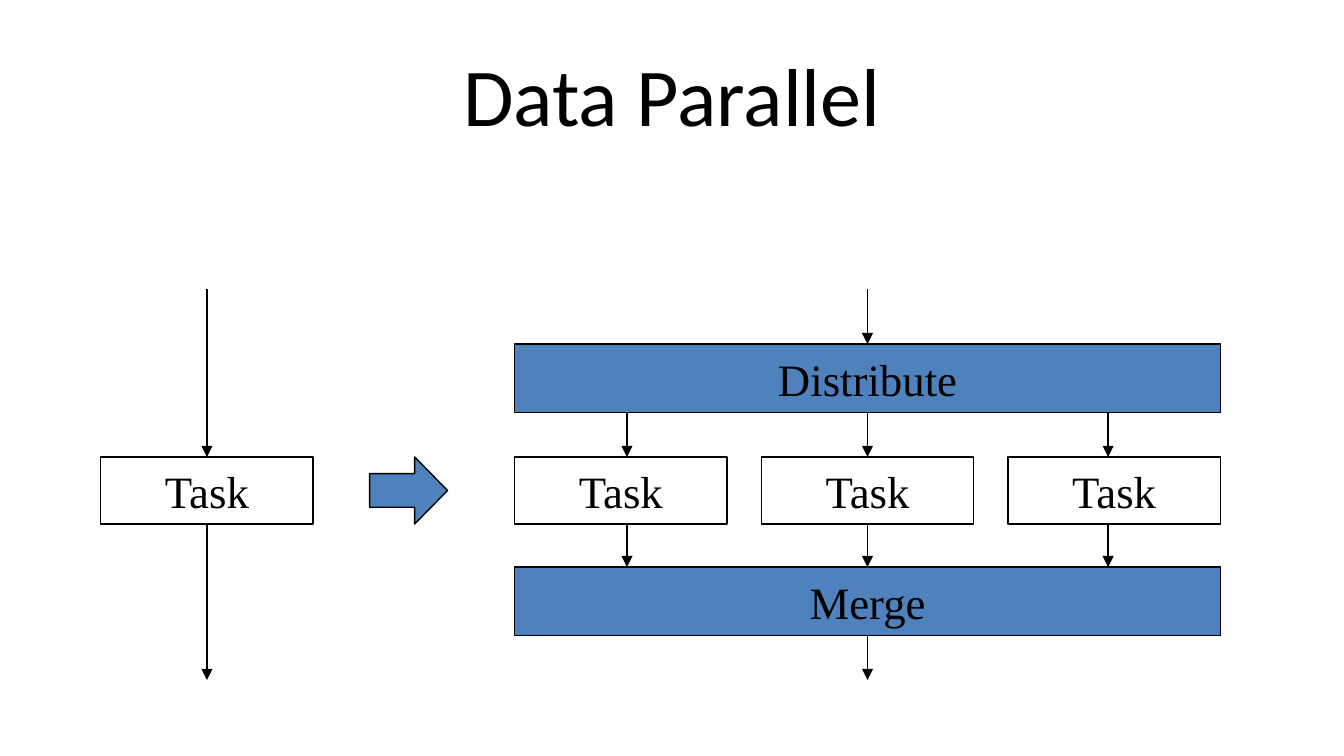
from lxml import etree
from pptx import Presentation
from pptx.dml.color import RGBColor
from pptx.enum.shapes import MSO_CONNECTOR, MSO_SHAPE
from pptx.enum.text import MSO_ANCHOR, PP_ALIGN
from pptx.oxml.ns import qn
from pptx.util import Inches, Pt

RECTANGLE = MSO_SHAPE.RECTANGLE
RIGHT_ARROW = MSO_SHAPE.RIGHT_ARROW
STRAIGHT = MSO_CONNECTOR.STRAIGHT
MIDDLE = MSO_ANCHOR.MIDDLE
CENTER = PP_ALIGN.CENTER

BLACK = RGBColor(0x00, 0x00, 0x00)
BLUE = RGBColor(0x4F, 0x81, 0xBD)
TITLE_FONT = {"name": "Calibri", "size": Pt(44)}
LABEL_FONT = {"name": "Times New Roman", "size": Pt(24)}

SLIDE_WIDTH = 10
SLIDE_HEIGHT = SLIDE_WIDTH * 9 / 16
TASK_WIDTH, TASK_HEIGHT = 1.58, 0.5
BAR_HEIGHT = 0.51
TASK_OFFSET = 1.25
DISTRIBUTE_OFFSET, MERGE_OFFSET = 0.41, 2.07
BRANCH_SPACING = 1.79
TASK_COUNT = 3


def write_text(frame, text, font_format):
    """Write one centred line in the given font."""
    frame.vertical_anchor = MIDDLE
    frame.word_wrap = True
    paragraph = frame.paragraphs[0]
    paragraph.alignment = CENTER
    run = paragraph.add_run()
    run.text = text
    for attribute, value in font_format.items():
        setattr(run.font, attribute, value)
    run.font.color.rgb = BLACK


def add_title(slide, box, text):
    """Place the title placeholder in its box."""
    title = slide.shapes.title
    for attribute, value in zip(("left", "top", "width", "height"), box):
        setattr(title, attribute, Inches(value))
    write_text(title.text_frame, text, TITLE_FONT)


def add_block(slide, kind, box, fill=None, label=None):
    """Add an outlined shape with an optional fill and label."""
    block = slide.shapes.add_shape(kind, *map(Inches, box))
    block.shadow.inherit = False
    if fill is None:
        block.fill.background()
    else:
        block.fill.solid()
        block.fill.fore_color.rgb = fill
    block.line.color.rgb = BLACK
    block.line.width = Pt(0.75)
    if label:
        write_text(block.text_frame, label, LABEL_FONT)
    return block


def add_flow(slide, x, start, end):
    """Add a downward arrow at x."""
    flow = slide.shapes.add_connector(STRAIGHT, *map(Inches, (x, start, x, end)))
    flow.line.color.rgb = BLACK
    flow.line.width = Pt(0.75)
    etree.SubElement(flow.line._get_or_add_ln(), qn("a:tailEnd"), type="triangle")
    etree.SubElement(flow._element.spPr, qn("a:effectLst"))


def add_serial(slide, box):
    """Draw the single task with its input and output."""
    left, top, width, height = box
    task_top = top + TASK_OFFSET
    center = left + width / 2
    add_block(slide, RECTANGLE, (left, task_top, width, TASK_HEIGHT), label="Task")
    add_flow(slide, center, top, task_top)
    add_flow(slide, center, task_top + TASK_HEIGHT, top + height)


def add_parallel(slide, box):
    """Draw the tasks running between the distribute and merge bars."""
    left, top, width, height = box
    center = left + width / 2
    task_top = top + TASK_OFFSET
    distribute_top, merge_top = top + DISTRIBUTE_OFFSET, top + MERGE_OFFSET
    pitch = (width - TASK_WIDTH) / (TASK_COUNT - 1)

    for label, bar_top in (("Distribute", distribute_top), ("Merge", merge_top)):
        add_block(slide, RECTANGLE, (left, bar_top, width, BAR_HEIGHT), BLUE, label)
    for index in range(TASK_COUNT):
        task_box = (left + index * pitch, task_top, TASK_WIDTH, TASK_HEIGHT)
        add_block(slide, RECTANGLE, task_box, label="Task")
        branch = center + (index - (TASK_COUNT - 1) / 2) * BRANCH_SPACING
        add_flow(slide, branch, distribute_top + BAR_HEIGHT, task_top)
        add_flow(slide, branch, task_top + TASK_HEIGHT, merge_top)
    add_flow(slide, center, top, distribute_top)
    add_flow(slide, center, merge_top + BAR_HEIGHT, top + height)


def add_transition(slide, box):
    """Draw the block arrow from the serial to the parallel form."""
    transition = add_block(slide, RIGHT_ARROW, box, BLUE)
    transition.adjustments[0] = 0.5
    transition.adjustments[1] = 0.49


def main():
    """Build and save the slide."""
    deck = Presentation()
    deck.slide_width, deck.slide_height = Inches(SLIDE_WIDTH), Inches(SLIDE_HEIGHT)
    slide = deck.slides.add_slide(deck.slide_layouts.get_by_name("Title Only"))
    add_title(slide, (0.5, 0.23, 9, 0.94), "Data Parallel")
    add_serial(slide, (0.75, 2.15, TASK_WIDTH, 2.91))
    add_transition(slide, (2.75, 3.4, 0.58, 0.5))
    add_parallel(slide, (3.83, 2.15, 5.25, 2.91))
    deck.save("out.pptx")


if __name__ == "__main__":
    main()
